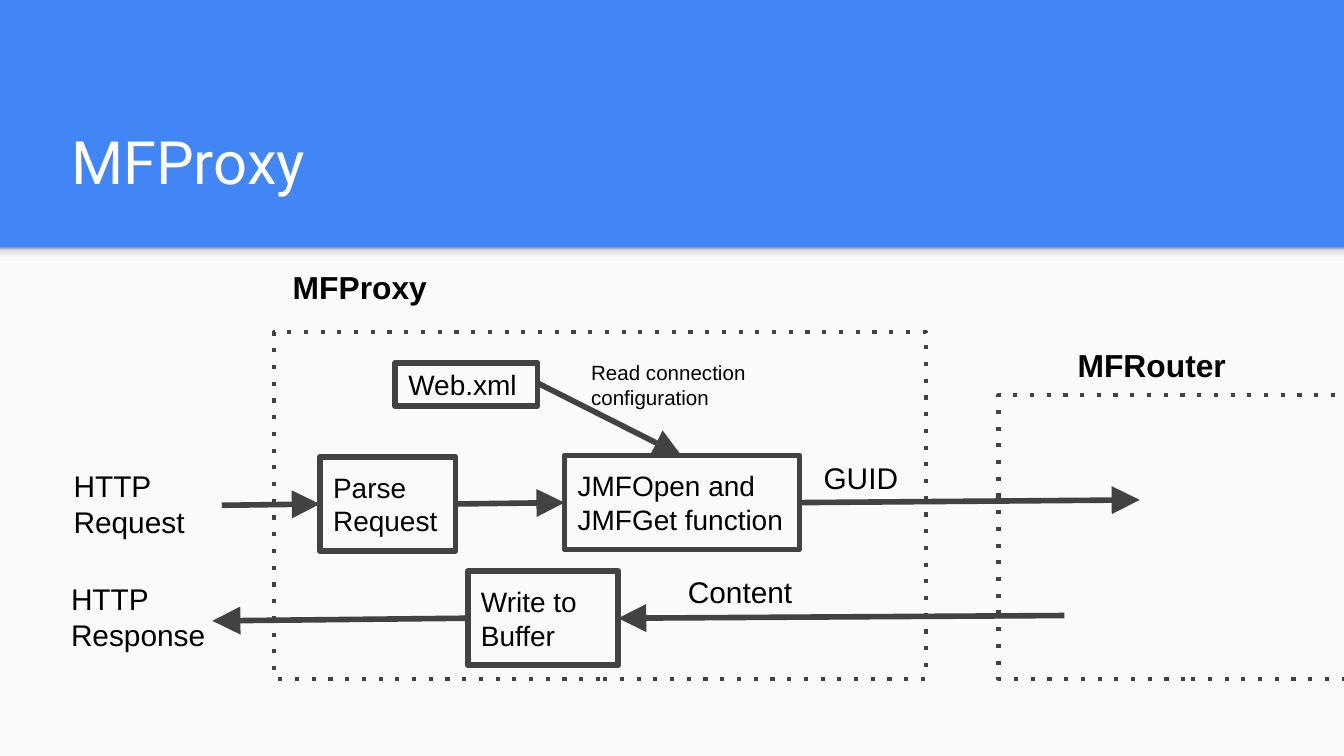
from copy import deepcopy

from lxml import etree
from pptx import Presentation
from pptx.dml.color import RGBColor
from pptx.enum.shapes import MSO_CONNECTOR, MSO_SHAPE
from pptx.enum.text import MSO_ANCHOR, PP_ALIGN
from pptx.oxml.ns import qn
from pptx.util import Inches, Pt

RECTANGLE = MSO_SHAPE.RECTANGLE
STRAIGHT = MSO_CONNECTOR.STRAIGHT
TOP, MIDDLE, BOTTOM = MSO_ANCHOR.TOP, MSO_ANCHOR.MIDDLE, MSO_ANCHOR.BOTTOM
LEFT = PP_ALIGN.LEFT

COLORS = {"banner": "4285F4", "body": "FAFAFA", "ink": "424242",
          "text": "000000", "title": "FFFFFF"}
SHADOW_STOPS = [(0, "F9F9F9"), (0.36, "F9F9F9"), (0.8, "DEDEDE"), (1, "999999")]

SLIDE_WIDTH = 10
SLIDE_HEIGHT = SLIDE_WIDTH * 9 / 16
BANNER_HEIGHT = 1.84
BODY = (0, BANNER_HEIGHT, SLIDE_WIDTH, SLIDE_HEIGHT - BANNER_HEIGHT)
BODY_SHADOW = (0, BANNER_HEIGHT, SLIDE_WIDTH, 0.12)
TITLE = ("MFProxy", (0.43, 0.72, 8.99, 0.84))

ZONES = [(2.04, 2.47, 4.85, 2.58), (7.43, 2.94, 2.78, 2.11)]
STEPS = [
    ("Web.xml", (2.94, 2.7, 1.06, 0.32)),
    ("Parse Request", (2.38, 3.4, 1.01, 0.7)),
    ("JMFOpen and JMFGet function", (4.2, 3.39, 1.75, 0.7)),
    ("Write to Buffer", (3.48, 4.25, 1.12, 0.7)),
]
LABELS = [
    ("MFProxy", (2.08, 1.89, 1.53, 0.42), 17, True),
    ("MFRouter", (7.92, 2.47, 1.53, 0.42), 17, True),
    ("Read connection configuration", (4.3, 2.58, 1.4, 0.47), 11, False),
    ("HTTP Request", (0.45, 3.38, 1.13, 0.7), 16, False),
    ("HTTP Response", (0.43, 4.22, 1.22, 0.7), 16, False),
    ("GUID", (6.03, 3.32, 0.79, 0.42), 16, False),
    ("Content", (5.02, 4.17, 1.01, 0.42), 16, False),
]
ARROWS = [
    ((1.65, 3.76), (2.38, 3.75)),
    ((3.39, 3.75), (4.2, 3.74)),
    ((4, 2.85), (5.07, 3.39)),
    ((5.94, 3.74), (8.48, 3.72)),
    ((7.92, 4.58), (4.6, 4.6)),
    ((3.48, 4.6), (1.58, 4.62)),
]


def rgb(name):
    return RGBColor.from_string(COLORS[name])


def inches(values):
    return [Inches(value) for value in values]


def write(shape, text, size, color="text", font="Arial", bold=False, anchor=TOP):
    frame = shape.text_frame
    frame.word_wrap = True
    frame.vertical_anchor = anchor
    frame.margin_left = frame.margin_right = Inches(0.1)
    frame.margin_top = frame.margin_bottom = Inches(0.1)
    paragraph = frame.paragraphs[0]
    paragraph.text = text
    paragraph.alignment = LEFT
    paragraph.font.size = Pt(size)
    paragraph.font.name = font
    paragraph.font.bold = bold
    paragraph.font.color.rgb = rgb(color)


def add_label(slide, text, box, size, **style):
    write(slide.shapes.add_textbox(*inches(box)), text, size, **style)


def add_panel(slide, box):
    panel = slide.shapes.add_shape(RECTANGLE, *inches(box))
    panel.shadow.inherit = False
    panel.line.fill.background()
    return panel


def add_outline(slide, box, width):
    outline = slide.shapes.add_shape(RECTANGLE, *inches(box))
    outline.shadow.inherit = False
    outline.fill.background()
    outline.line.color.rgb = rgb("ink")
    outline.line.width = Pt(width)
    return outline


def add_shadow(slide):
    shadow = add_panel(slide, BODY_SHADOW)
    shadow.fill.gradient()
    shadow.fill.gradient_angle = 90
    stop_list = shadow.fill.gradient_stops[0]._gs.getparent()
    for _ in SHADOW_STOPS[2:]:
        stop_list.append(deepcopy(stop_list[0]))
    for stop, (position, color) in zip(shadow.fill.gradient_stops, SHADOW_STOPS):
        stop.position = position
        stop.color.rgb = RGBColor.from_string(color)


def add_arrow(slide, start, end):
    arrow = slide.shapes.add_connector(STRAIGHT, *inches(start + end))
    arrow.line.color.rgb = rgb("ink")
    arrow.line.width = Pt(3)
    etree.SubElement(arrow.line._get_or_add_ln(), qn("a:tailEnd"),
                     type="triangle", w="lg", len="lg")
    etree.SubElement(arrow._element.spPr, qn("a:effectLst"))


def main():
    presentation = Presentation()
    presentation.slide_width = Inches(SLIDE_WIDTH)
    presentation.slide_height = Inches(SLIDE_HEIGHT)
    slide = presentation.slides.add_slide(presentation.slide_layouts[6])
    slide.background.fill.solid()
    slide.background.fill.fore_color.rgb = rgb("banner")

    body = add_panel(slide, BODY)
    body.fill.solid()
    body.fill.fore_color.rgb = rgb("body")
    add_shadow(slide)
    text, box = TITLE
    add_label(slide, text, box, 32, color="title", font="Roboto", anchor=BOTTOM)

    for box in ZONES:
        zone = add_outline(slide, box, 2.25)
        etree.SubElement(zone.line._get_or_add_ln(), qn("a:prstDash"), val="dot")
    for start, end in ARROWS:
        add_arrow(slide, start, end)
    for text, box in STEPS:
        write(add_outline(slide, box, 3), text, 15, anchor=MIDDLE)
    for text, box, size, bold in LABELS:
        add_label(slide, text, box, size, bold=bold)

    presentation.save("out.pptx")


if __name__ == "__main__":
    main()
